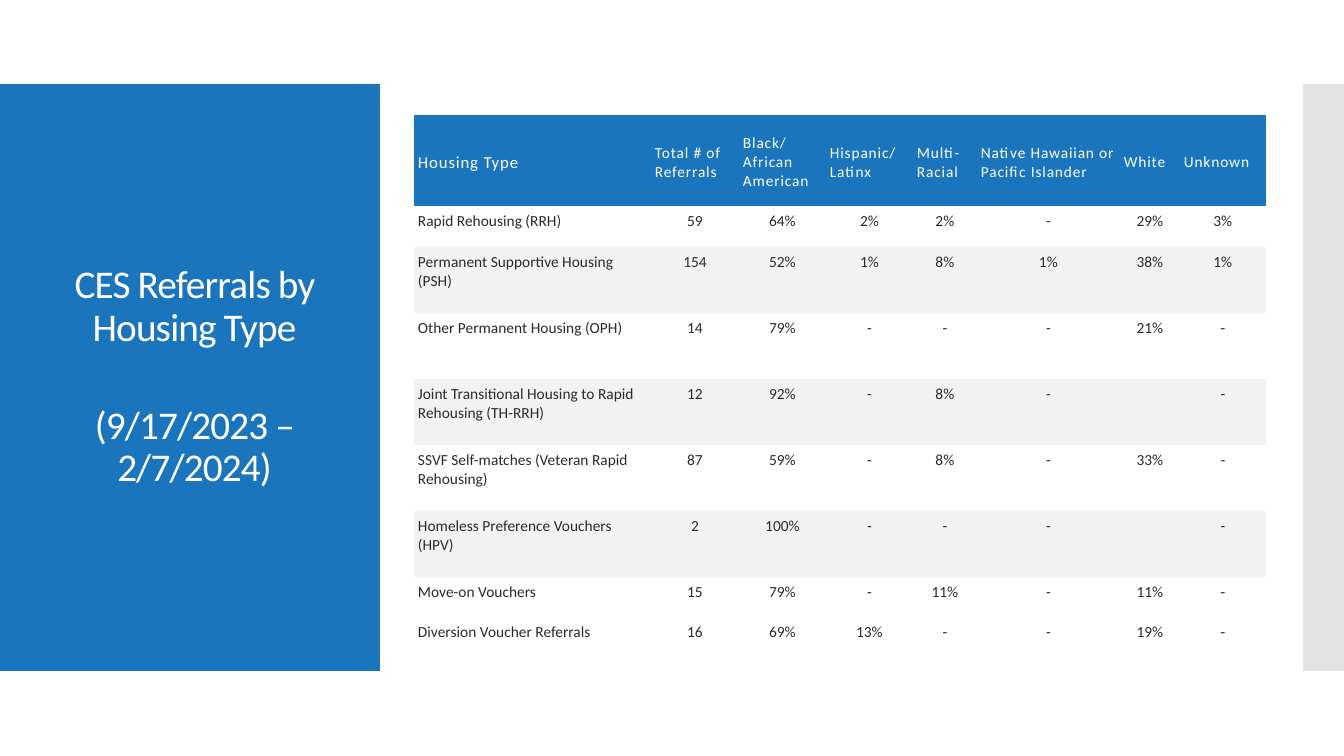
from lxml import etree
from pptx import Presentation
from pptx import util as u
from pptx.dml.color import RGBColor
from pptx.enum import shapes, text
from pptx.oxml.ns import qn

PX = 914400 / 100.8
NO_STYLE = "{2D5ABB26-0587-4C30-8999-92F81FD0307C}"
BLUE, WHITE, BAND, GREY, INK = "1B75BC", "FFFFFF", "F2F2F2", "C8C8C8", "2D2926"

HEADER = ["Housing Type", "Total # of Referrals", "Black/ African American",
          "Hispanic/ Latinx", "Multi- Racial",
          "Native Hawaiian or Pacific Islander", "White", "Unknown"]
REFERRALS = [
    ["Rapid Rehousing (RRH)", "59", "64%", "2%", "2%", "-", "29%", "3%"],
    ["Permanent Supportive Housing (PSH)", "154", "52%", "1%", "8%", "1%", "38%", "1%"],
    ["Other Permanent Housing (OPH)", "14", "79%", "-", "-", "-", "21%", "-"],
    ["Joint Transitional Housing to Rapid Rehousing (TH-RRH)",
     "12", "92%", "-", "8%", "-", "", "-"],
    ["SSVF Self-matches (Veteran Rapid Rehousing)",
     "87", "59%", "-", "8%", "-", "33%", "-"],
    ["Homeless Preference Vouchers (HPV)", "2", "100%", "-", "-", "-", "", "-"],
    ["Move-on Vouchers", "15", "79%", "-", "11%", "-", "11%", "-"],
    ["Diversion Voucher Referrals", "16", "69%", "13%", "-", "-", "19%", "-"],
]
COLS = [237, 88, 87, 87, 64, 143, 60, 86]
ROWS = [91, 41] + [66] * 5 + [40, 40]
BANDED = (2, 4, 6)


def px(n):
    return u.Emu(round(n * PX))


def rgb(color):
    return RGBColor.from_string(color)


class Deck:
    font = "Calibri"

    def __init__(self, width, height):
        self.prs = Presentation()
        self.prs.slide_width, self.prs.slide_height = px(width), px(height)
        self.s = self.prs.slides.add_slide(self.prs.slide_layouts[5])

    def run(self, p, words, size, color, spacing=0):
        r = p.add_run()
        r.text = words
        r.font.name, r.font.size = self.font, u.Pt(size)
        r.font.color.rgb = rgb(color)
        r.font._element.set("spc", str(spacing))

    def rect(self, x, y, w, h, color, opacity=100):
        sp = self.s.shapes.add_shape(shapes.MSO_SHAPE.RECTANGLE, *map(px, (x, y, w, h)))
        sp.shadow.inherit = False
        sp.line.fill.background()
        sp.fill.solid()
        sp.fill.fore_color.rgb = rgb(color)
        if opacity < 100:
            clr = sp._element.spPr.find(".//" + qn("a:srgbClr"))
            etree.SubElement(clr, qn("a:alpha")).set("val", str(opacity * 1000))

    def title(self, x, y, w, h, paragraphs, gap):
        sp = self.s.shapes.title
        self.s.shapes._spTree.append(sp._element)
        sp.left, sp.top, sp.width, sp.height = map(px, (x, y, w, h))
        tf = sp.text_frame
        tf.word_wrap = True
        tf.auto_size = text.MSO_AUTO_SIZE.NONE
        tf.vertical_anchor = text.MSO_ANCHOR.MIDDLE
        for i, words in enumerate(paragraphs):
            p = tf.add_paragraph() if i else tf.paragraphs[0]
            p.alignment = text.PP_ALIGN.CENTER
            p.line_spacing = 0.9
            p.space_before = u.Pt(gap if i else 0)
            self.run(p, words, 28, WHITE, -60)

    def cell(self, cell, words, fill, size, color, spacing, align, anchor):
        cell.margin_left, cell.margin_top = px(4), px(6)
        cell.margin_right, cell.margin_bottom = px(4), px(2)
        cell.vertical_anchor = anchor
        if fill:
            cell.fill.solid()
            cell.fill.fore_color.rgb = rgb(fill)
        else:
            cell.fill.background()
        p = cell.text_frame.paragraphs[0]
        p.alignment = align
        if words:
            self.run(p, words, size, color, spacing)

    def table(self, x, y, cols, rows, header, body):
        frame = self.s.shapes.add_table(len(rows), len(cols),
                                        *map(px, (x, y, sum(cols), sum(rows))))
        tbl = frame.table
        tbl.horz_banding = False
        tbl._tbl.tblPr.find(qn("a:tableStyleId")).text = NO_STYLE
        for col, width in zip(tbl.columns, cols):
            col.width = px(width)
        for row, height in zip(tbl.rows, rows):
            row.height = px(height)
        left, center = text.PP_ALIGN.LEFT, text.PP_ALIGN.CENTER
        for j, words in enumerate(header):
            self.cell(tbl.cell(0, j), words, BLUE, 11 if j else 12, WHITE, 60,
                      left, text.MSO_ANCHOR.MIDDLE)
        for i, values in enumerate(body, 1):
            for j, words in enumerate(values):
                self.cell(tbl.cell(i, j), words, BAND if i in BANDED else None, 11, INK, 0,
                          center if j else left, text.MSO_ANCHOR.TOP)


def main():
    deck = Deck(1344, 756)
    deck.rect(0, 84, 380, 587, BLUE)
    deck.rect(1303, 84, 41, 587, GREY, opacity=50)
    deck.title(28, 124, 333, 507,
               ["CES Referrals by Housing Type", "(9/17/2023 – 2/7/2024)"], gap=40)
    deck.table(414, 115, COLS, ROWS, HEADER, REFERRALS)
    deck.prs.save("out.pptx")


if __name__ == "__main__":
    main()
